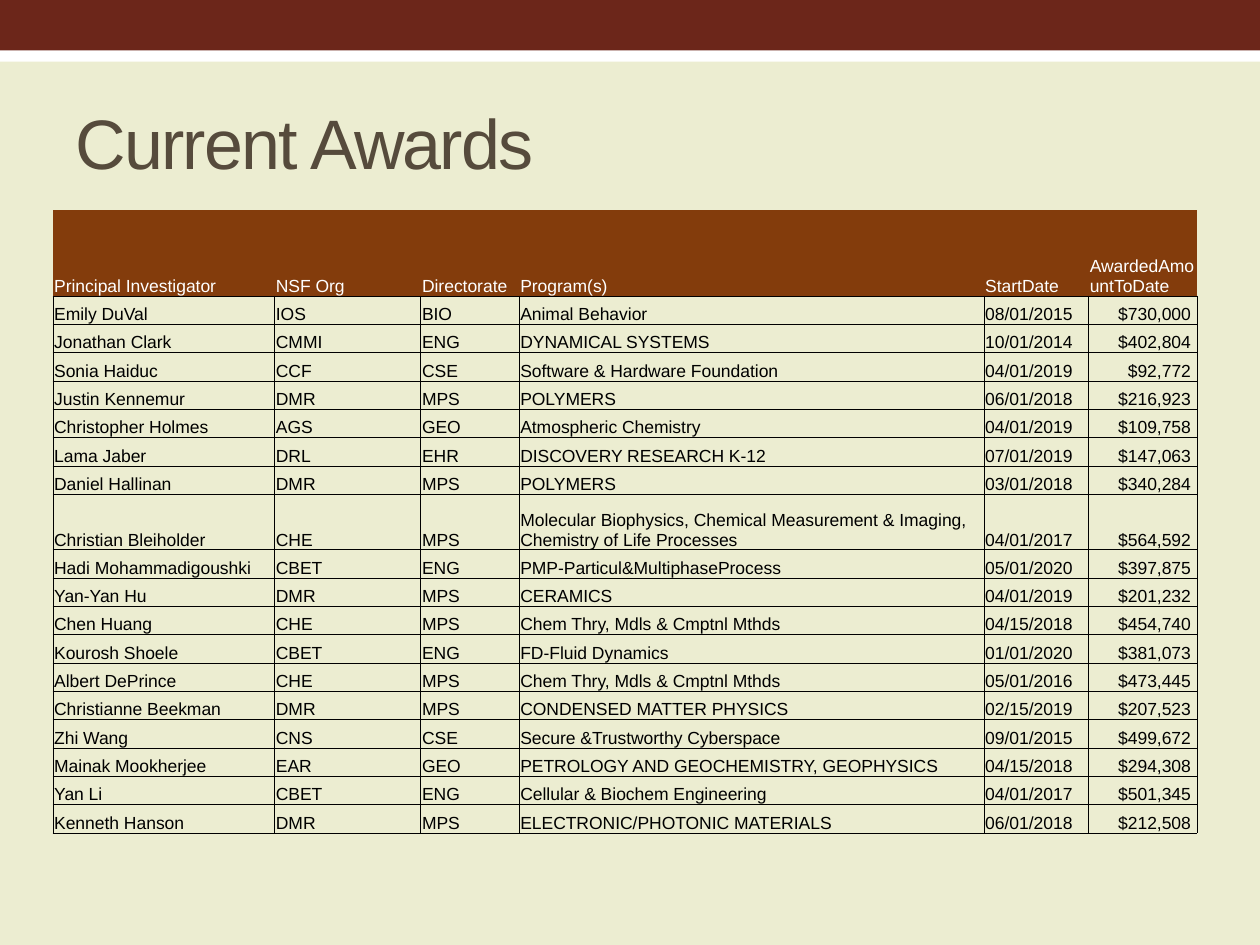
from lxml.etree import SubElement
from pptx import Presentation
from pptx.dml.color import RGBColor
from pptx.enum.shapes import MSO_SHAPE
from pptx.enum.text import MSO_ANCHOR, PP_ALIGN
from pptx.oxml.ns import qn
from pptx.util import Inches, Pt

CREAM = RGBColor(0xEC, 0xED, 0xD1)
WHITE = RGBColor(0xFF, 0xFF, 0xFF)
BLACK = RGBColor(0x00, 0x00, 0x00)
MAROON = RGBColor(0x6C, 0x26, 0x1A)
TAUPE = RGBColor(0x56, 0x4B, 0x3C)
RUST = RGBColor(0x83, 0x3C, 0x0C)
FONT = "Arial"

HEADINGS = ("Principal Investigator", "NSF Org", "Directorate", "Program(s)", "StartDate", "AwardedAmountToDate")
AWARDS = [
    ("Emily DuVal", "IOS", "BIO", "Animal Behavior", "08/01/2015", 730000),
    ("Jonathan Clark", "CMMI", "ENG", "DYNAMICAL SYSTEMS", "10/01/2014", 402804),
    ("Sonia Haiduc", "CCF", "CSE", "Software & Hardware Foundation", "04/01/2019", 92772),
    ("Justin Kennemur", "DMR", "MPS", "POLYMERS", "06/01/2018", 216923),
    ("Christopher Holmes", "AGS", "GEO", "Atmospheric Chemistry", "04/01/2019", 109758),
    ("Lama Jaber", "DRL", "EHR", "DISCOVERY RESEARCH K-12", "07/01/2019", 147063),
    ("Daniel Hallinan", "DMR", "MPS", "POLYMERS", "03/01/2018", 340284),
    ("Christian Bleiholder", "CHE", "MPS",
     "Molecular Biophysics, Chemical Measurement & Imaging, Chemistry of Life Processes", "04/01/2017", 564592),
    ("Hadi Mohammadigoushki", "CBET", "ENG", "PMP-Particul&MultiphaseProcess", "05/01/2020", 397875),
    ("Yan-Yan Hu", "DMR", "MPS", "CERAMICS", "04/01/2019", 201232),
    ("Chen Huang", "CHE", "MPS", "Chem Thry, Mdls & Cmptnl Mthds", "04/15/2018", 454740),
    ("Kourosh Shoele", "CBET", "ENG", "FD-Fluid Dynamics", "01/01/2020", 381073),
    ("Albert DePrince", "CHE", "MPS", "Chem Thry, Mdls & Cmptnl Mthds", "05/01/2016", 473445),
    ("Christianne Beekman", "DMR", "MPS", "CONDENSED MATTER PHYSICS", "02/15/2019", 207523),
    ("Zhi Wang", "CNS", "CSE", "Secure &Trustworthy Cyberspace", "09/01/2015", 499672),
    ("Mainak Mookherjee", "EAR", "GEO", "PETROLOGY AND GEOCHEMISTRY, GEOPHYSICS", "04/15/2018", 294308),
    ("Yan Li", "CBET", "ENG", "Cellular & Biochem Engineering", "04/01/2017", 501345),
    ("Kenneth Hanson", "DMR", "MPS", "ELECTRONIC/PHOTONIC MATERIALS", "06/01/2018", 212508),
]
COLUMN_WIDTHS = (1.76, 1.16, 0.78, 3.69, 0.83, 0.86)
TABLE_HEIGHT, HEADER_HEIGHT, TALL_HEIGHT = 5.17, 0.68, 0.44
TALL_ROW = 8


def set_borders(cell, lined_sides):
    properties = cell._tc.get_or_add_tcPr()
    for side in "LRTB":
        line = SubElement(properties, qn(f"a:ln{side}"), w=str(Pt(0.5)))
        if side in lined_sides:
            fill = SubElement(line, qn("a:solidFill"))
            SubElement(fill, qn("a:srgbClr"), val=str(BLACK))
        else:
            SubElement(line, qn("a:noFill"))


presentation = Presentation()
presentation.slide_width = Inches(10)
presentation.slide_height = Inches(7.5)
slide = presentation.slides.add_slide(presentation.slide_layouts[6])
slide.background.fill.solid()
slide.background.fill.fore_color.rgb = CREAM

for top, height, color in ((0.24, 0.25, WHITE), (0, 0.4, MAROON)):
    band = slide.shapes.add_shape(MSO_SHAPE.RECTANGLE, 0, Inches(top), Inches(10), Inches(height))
    band.shadow.inherit = False
    band.fill.solid()
    band.fill.fore_color.rgb = color
    band.line.fill.background()

title = slide.shapes.add_textbox(Inches(0.5), Inches(0.58), Inches(9), Inches(1.08)).text_frame
title.word_wrap = True
title.vertical_anchor = MSO_ANCHOR.MIDDLE
title.text = "Current Awards"
title_run = title.paragraphs[0].runs[0]
title_run.font.size = Pt(40)
title_run.font.name = FONT
title_run.font.color.rgb = TAUPE
title_run._r.get_or_add_rPr().set("spc", "-100")

rows = [HEADINGS]
rows += [(*award, f"${amount:,} ") for *award, amount in AWARDS]
rows.append([""] * len(HEADINGS))
last_row = len(rows) - 1
row_height = (TABLE_HEIGHT - HEADER_HEIGHT - TALL_HEIGHT) / (len(rows) - 2)

awards_table = slide.shapes.add_table(
    len(rows), len(HEADINGS), Inches(0.42), Inches(1.67), Inches(sum(COLUMN_WIDTHS)), Inches(TABLE_HEIGHT)
).table
awards_table.first_row = False
awards_table.horz_banding = False
for column, width in zip(awards_table.columns, COLUMN_WIDTHS):
    column.width = Inches(width)

for row_index, values in enumerate(rows):
    height = {0: HEADER_HEIGHT, TALL_ROW: TALL_HEIGHT}.get(row_index, row_height)
    awards_table.rows[row_index].height = Inches(height)
    is_header = row_index == 0
    lined_sides = {0: "B", last_row: "T"}.get(row_index, "LRTB")
    for column_index, value in enumerate(values):
        cell = awards_table.cell(row_index, column_index)
        cell.margin_left = cell.margin_right = cell.margin_top = Inches(0.01)
        cell.margin_bottom = 0
        cell.vertical_anchor = MSO_ANCHOR.BOTTOM
        set_borders(cell, lined_sides)
        if is_header:
            cell.fill.solid()
            cell.fill.fore_color.rgb = RUST
        else:
            cell.fill.background()
        paragraph = cell.text_frame.paragraphs[0]
        if row_index == last_row:
            SubElement(paragraph._p, qn("a:endParaRPr"), sz="1000")
            continue
        paragraph.text = value
        if value.startswith("$"):
            paragraph.alignment = PP_ALIGN.RIGHT
        font = paragraph.runs[0].font
        font.size = Pt(10)
        font.name = FONT
        font.color.rgb = WHITE if is_header else BLACK

presentation.save("out.pptx")
